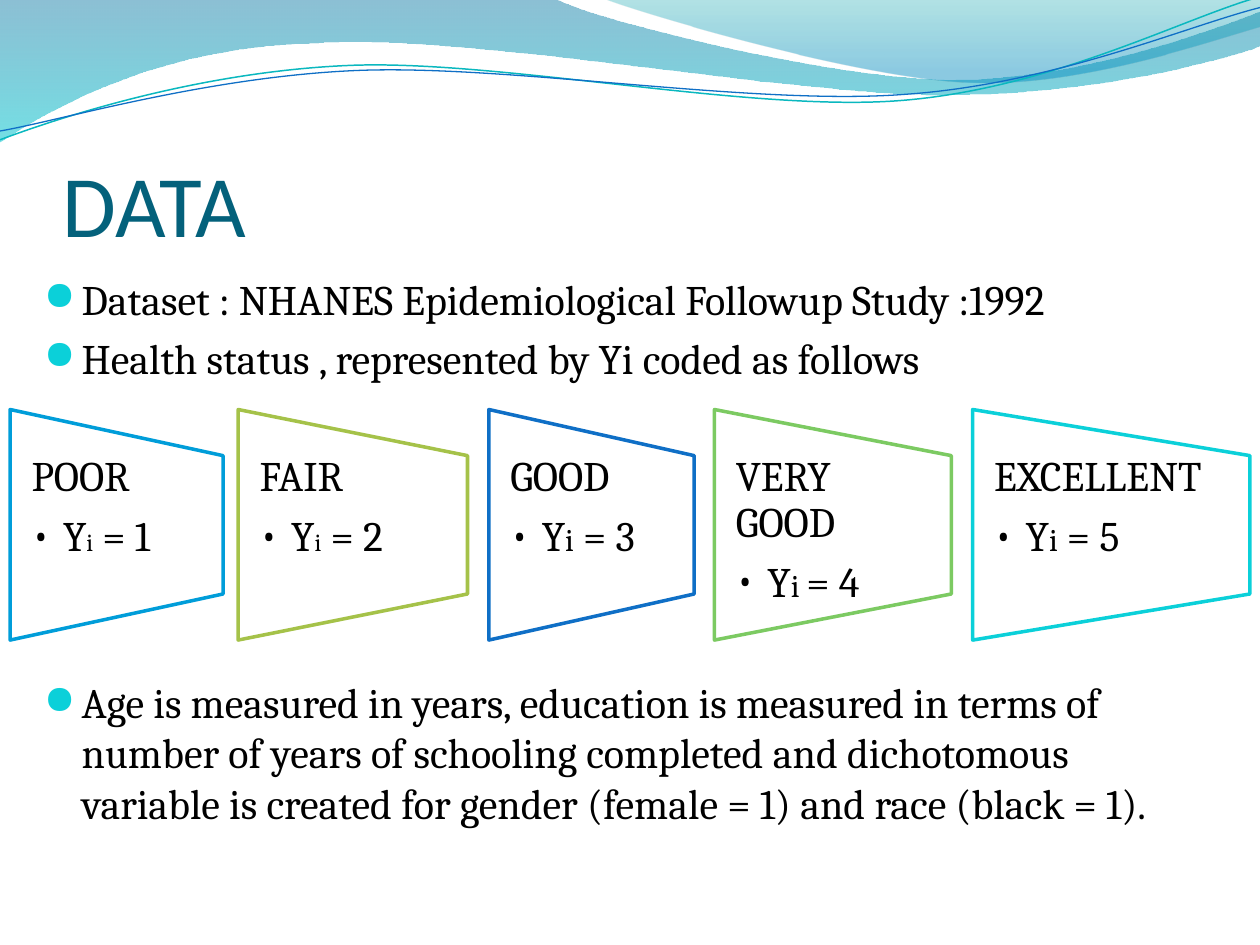
from lxml import etree
from pptx import Presentation, util as u
from pptx.dml.color import RGBColor
from pptx.enum import shapes, text
from pptx.oxml.ns import qn

HUE = {
    "ink": "000000", "title": "04617B", "paper": "FFFFFF",
    "sky": "009DD9", "olive": "A5C249", "blue": "0F6FC6",
    "green": "7CCA62", "aqua": "0BD0D9", "teal": "0AB8BF",
    "deep": "0074A1", "cyan": "00C6CF", "sea": "00A1A9", "lake": "008BBF",
}

# Each curve is a start point, then segments: 2 numbers for a line, 6 for a Bezier.
BANDS = [
    ([(0, 0), (4.4, -0.01), (4.76, 0.17, 6.64, 0.63, 7.58, 0.63),
      (8.53, 0.63, 9.58, 0.26, 10, 0.09), (10.01, 0.36),
      (9.83, 0.44, 8.7, 0.76, 7.46, 0.75), (6.22, 0.75, 3.82, 0.28, 2.57, 0.34),
      (1.29, 0.36, 0.46, 0.83, -0.01, 1.13)],
     [(0, "deep", 45), (1, "cyan", 55)]),
    ([(4.79, -0.01), (5.09, 0.11, 6.82, 0.62, 7.69, 0.65),
      (8.56, 0.69, 9.61, 0.32, 10, 0.21), (10, 0)],
     [(0, "sea", 30), (0.8, "lake", 45)]),
]
LINES = [
    ([(0, 1.11), (0.48, 0.93, 1.58, 0.57, 2.77, 0.52),
      (3.95, 0.47, 5.93, 0.89, 7.13, 0.8), (8.33, 0.71, 9.38, 0.15, 9.98, -0.02)],
     "teal", 0.85),
    ([(0, 1.04), (0.47, 0.96, 1.64, 0.61, 2.83, 0.56),
      (4.03, 0.51, 5.97, 0.84, 7.17, 0.75), (8.36, 0.67, 9.41, 0.21, 10, 0.06)],
     "blue", 0.75),
]
# Left, width, colour, label, subscript run, subscript size, value run
CARDS = [
    (0.08, 1.69, "sky", "POOR", "i", 14, " = 1"),
    (1.89, 1.82, "olive", "FAIR", "i", 14, " = 2"),
    (3.88, 1.63, "blue", "GOOD", "i", 18, " = 3"),
    (5.67, 1.88, "green", "VERY GOOD", "i ", 18, "= 4"),
    (7.72, 2.2, "aqua", "EXCELLENT", "i", 18, " = 5"),
]
# Wording and space before in points; the last leaves room for the cards.
NOTES = [
    ("Dataset : NHANES Epidemiological Followup Study :1992", 4.8),
    ("Health status , represented by Yi coded as follows", 4.8),
    ("Age is measured in years, education is measured in terms of number of "
     "years of schooling completed and dichotomous variable is created for "
     "gender (female = 1) and race (black = 1).", 168),
]


def rgb(name):
    return RGBColor.from_string(HUE[name])


def bend(shape, curve):
    """Join the three corners of each Bezier segment into one curve."""
    lines = shape._element.spPr.iter(qn("a:lnTo"))
    lines = iter(list(lines))
    for seg in curve[1:]:
        trio = [next(lines) for _ in range(len(seg) // 2)]
        if len(trio) == 3:
            arc = etree.Element(qn("a:cubicBezTo"))
            trio[0].addprevious(arc)
            for line in trio:
                arc.append(line[0])
                line.getparent().remove(line)


def draw(slide, x, y, curve, close):
    pts = [(u.Inches(x + seg[n]), u.Inches(y + seg[n + 1]))
           for seg in curve for n in range(0, len(seg), 2)]
    pen = slide.shapes.build_freeform(*pts[0])
    pen.add_line_segments(pts[1:], close=close)
    shape = pen.convert_to_shape()
    shape.shadow.inherit = False
    bend(shape, curve)
    return shape


def waves(slide, x, y):
    for curve, stops in BANDS:
        band = draw(slide, x, y, curve, True)
        band.line.fill.background()
        band.fill.gradient()
        band.fill.gradient_angle = 270
        for stop, (pos, hue, _) in zip(band.fill.gradient_stops, stops):
            stop.position = pos
            stop.color.rgb = rgb(hue)
        marks = band._element.spPr.iter(qn("a:srgbClr"))
        for mark, (_, _, alpha) in zip(marks, stops):
            etree.SubElement(mark, qn("a:alpha"), val=str(alpha * 1000))
    for curve, hue, width in LINES:
        line = draw(slide, x, y, curve, False)
        line.fill.background()
        line.line.color.rgb = rgb(hue)
        line.line.width = u.Pt(width)


def frame(slide, x, y, w, h, pads):
    """Add a text box; pads are left, top, right and bottom."""
    tf = slide.shapes.add_textbox(*map(u.Inches, (x, y, w, h))).text_frame
    tf.word_wrap = True
    (tf.margin_left, tf.margin_top,
     tf.margin_right, tf.margin_bottom) = map(u.Inches, pads)
    return tf


def write(par, words, size, face="Cambria", hue="ink"):
    run = par.add_run()
    run.text = words
    run.font.size = u.Pt(size)
    run.font.name = face
    run.font.color.rgb = rgb(hue)


def bullet(par, sign, inset, face="Cambria", hue="ink", size=100):
    props = par._p.get_or_add_pPr()
    props.set("marL", str(u.Inches(inset)))
    props.set("indent", str(-u.Inches(inset)))
    tint = etree.SubElement(props, qn("a:buClr"))
    etree.SubElement(tint, qn("a:srgbClr"), val=HUE[hue])
    etree.SubElement(props, qn("a:buSzPct"), val=str(size * 1000))
    etree.SubElement(props, qn("a:buFont"), typeface=face)
    etree.SubElement(props, qn("a:buChar"), char=sign)


def title(slide, x, y, w, h):
    tf = frame(slide, x, y, w, h, (0, 0.05, 0, 0))
    tf.vertical_anchor = text.MSO_ANCHOR.BOTTOM
    write(tf.paragraphs[0], "DATA", 50, "Calibri", "title")


def body(slide, x, y, w, h):
    tf = frame(slide, x, y, w, h, (0.1, 0.05, 0.1, 0.05))
    for n, (words, gap) in enumerate(NOTES):
        par = tf.add_paragraph() if n else tf.paragraphs[0]
        par.space_before = u.Pt(gap)
        bullet(par, "●", 0.3, "OpenSymbol", "aqua", 95)
        write(par, words, 24)


def card(slide, x, y, w, h, hue, label, sub, small, value):
    # The preset is turned a quarter, so its own sides are swapped.
    left, top = x + (w - h) / 2, y + (h - w) / 2
    shape = slide.shapes.add_shape(
        shapes.MSO_SHAPE.FLOWCHART_MANUAL_OPERATION,
        *map(u.Inches, (left, top, h, w)))
    shape.rotation = 270
    shape.shadow.inherit = False
    shape.fill.solid()
    shape.fill.fore_color.rgb = rgb("paper")
    shape.line.color.rgb = rgb(hue)
    shape.line.width = u.Pt(2)

    tf = frame(slide, x, y + h / 5, w, h * 0.6, (0.17, 0, 0.17, 0))
    head, code = tf.paragraphs[0], tf.add_paragraph()
    for par, gap in ((head, 8.4), (code, 3.6)):
        par.line_spacing = 0.9
        par.space_after = u.Pt(gap)
    write(head, label, 24)
    code.level = 1
    bullet(code, "•", 0.25)
    for words, size in (("Y", 24), (sub, small), (value, 24)):
        write(code, words, size)


def main():
    deck = Presentation()
    deck.slide_width, deck.slide_height = u.Inches(10), u.Inches(7.5)
    slide = deck.slides.add_slide(deck.slide_layouts[6])
    waves(slide, 0, 0)
    title(slide, 0.5, 0.77, 9, 1.25)
    body(slide, 0.25, 2.12, 9.5, 4.8)
    for x, w, *rest in CARDS:
        card(slide, x, 3.25, w, 1.83, *rest)
    deck.save("out.pptx")


if __name__ == "__main__":
    main()
